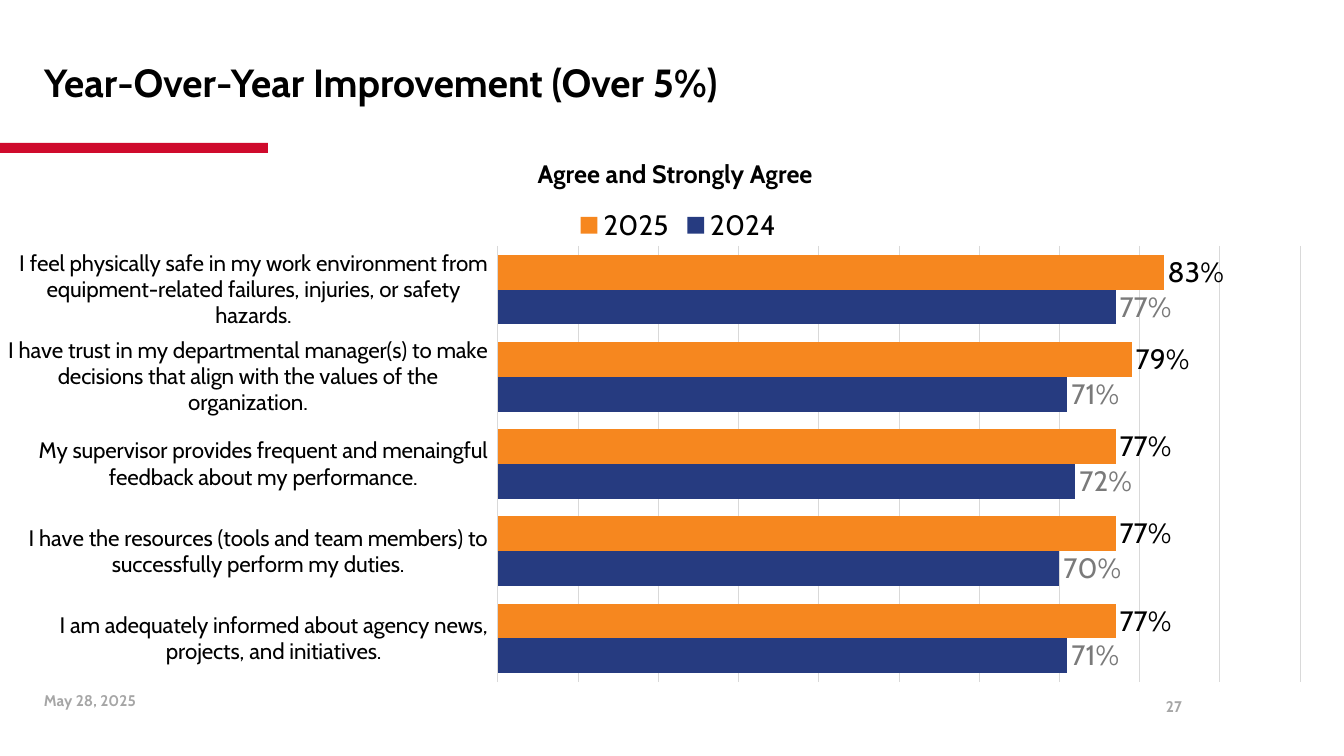
from dataclasses import dataclass

from lxml import etree
from pptx import Presentation
from pptx.chart.data import CategoryChartData
from pptx.dml.color import RGBColor
from pptx.enum.chart import XL_CHART_TYPE, XL_LABEL_POSITION, XL_LEGEND_POSITION, XL_TICK_LABEL_POSITION, XL_TICK_MARK
from pptx.enum.shapes import MSO_SHAPE
from pptx.enum.text import MSO_ANCHOR, MSO_AUTO_SIZE, PP_ALIGN
from pptx.oxml.ns import qn
from pptx.util import Pt

LEFT, CENTER, RIGHT = PP_ALIGN.LEFT, PP_ALIGN.CENTER, PP_ALIGN.RIGHT
TOP, MIDDLE = MSO_ANCHOR.TOP, MSO_ANCHOR.MIDDLE
NO_TICK = XL_TICK_MARK.NONE

# Content
TITLE = "Year-Over-Year Improvement (Over 5%)"
CHART_HEADING = "Agree and Strongly Agree"
DATE, PAGE = "May 28, 2025", "27"
STATEMENTS = [  # statement, 2024, 2025; listed from the bottom up
    ("I am adequately informed about agency news, projects, and initiatives.", 0.71, 0.77),
    ("I have the resources (tools and team members) to successfully perform my duties.", 0.70, 0.77),
    ("My supervisor provides frequent and menaingful feedback about my performance.", 0.72, 0.77),
    ("I have trust in my departmental manager(s) to make decisions that align with "
     "the values of the organization.", 0.71, 0.79),
    ("I feel physically safe in my work environment from equipment-related failures, "
     "injuries, or safety hazards.", 0.77, 0.83),
]


@dataclass(frozen=True)
class Theme:
    font: str = "Cabin"
    black: str = "000000"
    accent: str = "CF0A2C"
    grid: str = "D9D9D9"
    footer: str = "A6A6A6"
    bars: tuple = ("263B80", "F6871F")
    labels: tuple = ("7A7A7A", "000000")
    title_size: int = 28
    heading_size: int = 18
    chart_size: int = 20
    category_size: int = 16
    footer_size: int = 11


THEME = Theme()

# Geometry in px
EMU_PER_PX = 914400 / 100.8
SLIDE_SIZE = (1344, 756)
TITLE_BOX = (34, 23, 1274, 124)
ACCENT_BAR = (0, 143, 268, 10)
HEADING_BOX = (3, 153, 1344, 40)
CHART_BOX = (8, 195, 1339, 515)
DATE_BOX = (34, 686, 309, 40)
PAGE_BOX = (890, 686, 302, 40)
PLOT_AREA = {"x": 0.365, "y": 0.099, "w": 0.6, "h": 0.847}  # shares of the chart


def emu(*lengths):
    return [round(length * EMU_PER_PX) for length in lengths]


def set_font(font, size, color, bold=False):
    font.name, font.size, font.bold = THEME.font, Pt(size), bold
    font.color.rgb = RGBColor.from_string(color)


def write(shape, text, size, color, align, anchor=TOP):
    text_frame = shape.text_frame
    text_frame.text = text
    text_frame.word_wrap = True
    text_frame.auto_size = MSO_AUTO_SIZE.NONE
    text_frame.vertical_anchor = anchor
    paragraph = text_frame.paragraphs[0]
    paragraph.alignment = align
    set_font(paragraph.runs[0].font, size, color, bold=True)
    return paragraph


def grid_line(line):
    line.color.rgb = RGBColor.from_string(THEME.grid)
    line.width = Pt(0.75)


def place_plot(chart):
    plot_area = chart._chartSpace.chart.plotArea
    for old_layout in plot_area.findall(qn("c:layout")):
        plot_area.remove(old_layout)
    layout = etree.Element(qn("c:layout"))
    manual = etree.SubElement(layout, qn("c:manualLayout"))
    settings = {"layoutTarget": "inner", "xMode": "edge", "yMode": "edge", **PLOT_AREA}
    for name, value in settings.items():
        etree.SubElement(manual, qn(f"c:{name}")).set("val", str(value))
    plot_area.insert(0, layout)


presentation = Presentation()
presentation.slide_width, presentation.slide_height = emu(*SLIDE_SIZE)
slide = presentation.slides.add_slide(presentation.slide_layouts[5])

# Title and accent bar
title = slide.shapes.title
title.left, title.top, title.width, title.height = emu(*TITLE_BOX)
write(title, TITLE, THEME.title_size, THEME.black, LEFT, MIDDLE).line_spacing = 0.9

accent_bar = slide.shapes.add_shape(MSO_SHAPE.RECTANGLE, *emu(*ACCENT_BAR))
accent_bar.shadow.inherit = False
accent_bar.fill.solid()
accent_bar.fill.fore_color.rgb = RGBColor.from_string(THEME.accent)
accent_bar.line.fill.background()

# Chart
statements, scores_2024, scores_2025 = zip(*STATEMENTS)
chart_data = CategoryChartData(number_format="0%")
chart_data.categories = statements
chart_data.add_series("2024", scores_2024)
chart_data.add_series("2025", scores_2025)
chart = slide.shapes.add_chart(XL_CHART_TYPE.BAR_CLUSTERED, *emu(*CHART_BOX), chart_data).chart
chart.has_title = False
set_font(chart.font, THEME.chart_size, THEME.black)
place_plot(chart)

chart.has_legend = True
chart.legend.position = XL_LEGEND_POSITION.TOP
chart.legend.include_in_layout = False
set_font(chart.legend.font, THEME.chart_size, THEME.black)

category_axis = chart.category_axis
category_axis.major_tick_mark = category_axis.minor_tick_mark = NO_TICK
category_axis.tick_label_position = XL_TICK_LABEL_POSITION.LOW
set_font(category_axis.tick_labels.font, THEME.category_size, THEME.black)
grid_line(category_axis.format.line)

value_axis = chart.value_axis
value_axis.minimum_scale, value_axis.maximum_scale, value_axis.major_unit = 0, 1, 0.1
value_axis.has_major_gridlines = True
grid_line(value_axis.major_gridlines.format.line)
value_axis.visible = False

plot = chart.plots[0]
plot.gap_width, plot.overlap, plot.vary_by_categories = 50, 0, False
for series, bar_color, label_color in zip(plot.series, THEME.bars, THEME.labels):
    series.format.fill.solid()
    series.format.fill.fore_color.rgb = RGBColor.from_string(bar_color)
    labels = series.data_labels
    labels.show_value = True
    labels.position = XL_LABEL_POSITION.OUTSIDE_END
    labels.number_format, labels.number_format_is_linked = "0%", False
    set_font(labels.font, THEME.chart_size, label_color)

# Chart heading and footer
for box, text, size, color, align, anchor in [
    (HEADING_BOX, CHART_HEADING, THEME.heading_size, THEME.black, CENTER, TOP),
    (PAGE_BOX, PAGE, THEME.footer_size, THEME.footer, RIGHT, MIDDLE),
    (DATE_BOX, DATE, THEME.footer_size, THEME.footer, LEFT, TOP),
]:
    write(slide.shapes.add_textbox(*emu(*box)), text, size, color, align, anchor)

presentation.save("out.pptx")
